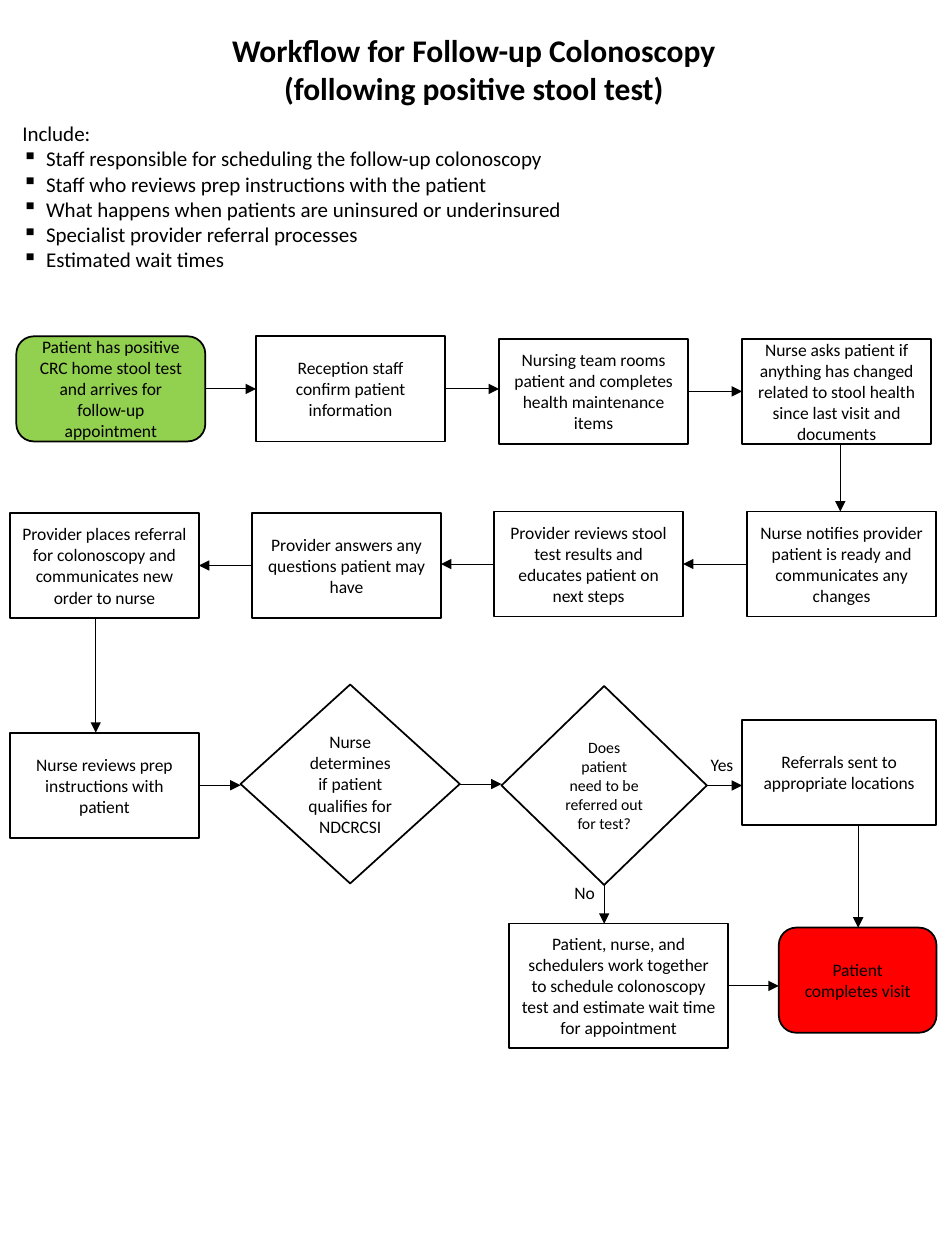
from dataclasses import dataclass
from itertools import pairwise

from lxml.etree import SubElement
from pptx import Presentation
from pptx.dml.color import RGBColor
from pptx.enum.shapes import MSO_CONNECTOR, MSO_SHAPE
from pptx.enum.text import MSO_ANCHOR, PP_ALIGN
from pptx.oxml.ns import qn
from pptx.util import Cm, Pt


@dataclass(frozen=True)
class Theme:
    font: str = "Calibri"
    ink: str = "000000"
    paper: str = "FFFFFF"
    start: str = "92D050"
    finish: str = "FF0000"
    title_size: int = 18
    list_size: int = 12
    step_size: int = 10
    small_size: int = 9
    outline: float = 1
    arrow: float = 0.5


@dataclass(frozen=True)
class Box:
    left: float
    top: float
    width: float = 3.81
    height: float = 2.12

    @property
    def right(self):
        return self.left + self.width

    @property
    def bottom(self):
        return self.top + self.height

    @property
    def middle(self):
        return self.top + self.height / 2

    def inside(self, left, top, width=3.81, height=2.12):
        return Box(self.left + left, self.top + top, width, height)

    def lengths(self):
        return Cm(self.left), Cm(self.top), Cm(self.width), Cm(self.height)


THEME = Theme()
PROCESS = MSO_SHAPE.FLOWCHART_PROCESS
DECISION = MSO_SHAPE.FLOWCHART_DECISION
ROUNDED = MSO_SHAPE.ROUNDED_RECTANGLE
DIAMOND = MSO_SHAPE.DIAMOND


def write(para, text, size=THEME.step_size, bold=False, align=PP_ALIGN.CENTER):
    para.alignment = align
    span = para.add_run()
    span.text = text
    span.font.name = THEME.font
    span.font.size = Pt(size)
    span.font.bold = bold
    span.font.color.rgb = RGBColor.from_string(THEME.ink)


def add_bullet(para, indent):
    properties = para._p.get_or_add_pPr()
    properties.set("marL", str(indent))
    properties.set("indent", str(-indent))
    SubElement(properties, qn("a:buChar"), char="▪")


def add_text(page, box, lines, **style):
    frame = page.shapes.add_textbox(*box.lengths()).text_frame
    frame.word_wrap = True
    for index, line in enumerate(lines):
        para = frame.add_paragraph() if index else frame.paragraphs[0]
        write(para, line, **style)
    return frame


def add_step(page, box, text, kind=PROCESS, fill=None, **style):
    shape = page.shapes.add_shape(kind, *box.lengths())
    shape.shadow.inherit = False
    if fill:
        shape.fill.solid()
        shape.fill.fore_color.rgb = RGBColor.from_string(fill)
    else:
        shape.fill.background()
    shape.line.color.rgb = RGBColor.from_string(THEME.ink)
    shape.line.width = Pt(THEME.outline)
    frame = shape.text_frame
    frame.word_wrap = True
    frame.vertical_anchor = MSO_ANCHOR.MIDDLE
    write(frame.paragraphs[0], text, **style)
    return box


def add_arrow(page, *ends):
    arrow = page.shapes.add_connector(MSO_CONNECTOR.STRAIGHT, *map(Cm, ends))
    arrow.line.color.rgb = RGBColor.from_string(THEME.ink)
    arrow.line.width = Pt(THEME.arrow)
    SubElement(arrow.line._get_or_add_ln(), qn("a:tailEnd"), type="triangle")
    SubElement(arrow._element.spPr, qn("a:effectLst"))


def link_across(page, source, target):
    forward = source.left < target.left
    start = source.right if forward else source.left
    end = target.left if forward else target.right
    add_arrow(page, start, source.middle, end, source.middle)


def link_down(page, source, target, x):
    add_arrow(page, x, source.bottom, x, target.top)


def add_header(page, box):
    add_text(page, box, ["Workflow for Follow-up Colonoscopy", "(following positive stool test)"],
             size=THEME.title_size, bold=True)


def add_include_list(page, box):
    frame = add_text(page, box, [
        "Include:",
        "Staff responsible for scheduling the follow-up colonoscopy",
        "Staff who reviews prep instructions with the patient",
        "What happens when patients are uninsured or underinsured",
        "Specialist provider referral processes",
        "Estimated wait times",
    ], size=THEME.list_size, align=PP_ALIGN.LEFT)
    for para in frame.paragraphs[1:]:
        add_bullet(para, Cm(0.48))


def add_row(page, box, steps):
    placed = [add_step(page, box.inside(*place), text, **style) for place, text, style in steps]
    for source, target in pairwise(placed):
        link_across(page, source, target)
    return placed


def add_intake(page, box):
    return add_row(page, box, [
        ((0, 0), "Patient has positive CRC home stool test and arrives for follow-up appointment",
         dict(kind=ROUNDED, fill=THEME.start)),
        ((4.83, 0), "Reception staff confirm patient information", {}),
        ((9.73, 0.05), "Nursing team rooms patient and completes health maintenance items", {}),
        ((14.63, 0.05), "Nurse asks patient if anything has changed related to stool health "
         "since last visit and documents", {}),
    ])


def add_review(page, box):
    return add_row(page, box, [
        ((14.86, 0), "Nurse notifies provider patient is ready and communicates any changes", {}),
        ((9.76, 0), "Provider reviews stool test results and educates patient on next steps", {}),
        ((4.88, 0.03), "Provider answers any questions patient may have", {}),
        ((0, 0.03), "Provider places referral for colonoscopy and communicates new order to nurse", {}),
    ])


def add_referral(page, box):
    placed = add_row(page, box, [
        ((0, 0.97), "Nurse reviews prep instructions with patient", {}),
        ((4.65, 0, 4.42, 4.01), "Nurse determines if patient qualifies for NDCRCSI",
         dict(kind=DIAMOND, fill=THEME.paper)),
        ((9.91, 0.03, 4.14, 4.01), "Does patient need to be referred out for test?",
         dict(kind=DECISION, size=THEME.small_size)),
        ((14.76, 0.71, 3.91, 2.12), "Referrals sent to appropriate locations", {}),
    ])
    add_text(page, box.inside(13.67, 1.27, 1.37, 0.69), ["Yes"])
    add_text(page, box.inside(10.9, 3.86, 1.37, 0.69), ["No"])
    return placed


def add_closing(page, box):
    return add_row(page, box, [
        ((0, 0, 4.42, 2.51), "Patient, nurse, and schedulers work together to schedule "
         "colonoscopy test and estimate wait time for appointment", {}),
        ((5.44, 0.08, 3.18, 2.12), "Patient completes visit",
         dict(kind=ROUNDED, fill=THEME.finish)),
    ])


def main():
    deck = Presentation()
    deck.slide_width, deck.slide_height = Cm(19.05), Cm(25.4)
    page = deck.slides.add_slide(deck.slide_layouts[6])
    add_header(page, Box(0.03, 0.51, 19.05, 1.8))
    add_include_list(page, Box(0.2, 2.31, 18.67, 3.33))
    intake = add_intake(page, Box(0.33, 6.78, 18.44, 2.17))
    review = add_review(page, Box(0.2, 10.31, 18.67, 2.15))
    referral = add_referral(page, Box(0.2, 13.8, 18.67, 4.04))
    closing = add_closing(page, Box(10.26, 18.62, 8.62, 2.51))
    link_down(page, intake[-1], review[0], 16.94)
    link_down(page, review[-1], referral[0], 1.93)
    link_down(page, referral[2], closing[0], 12.18)
    link_down(page, referral[3], closing[1], 17.3)
    deck.save("out.pptx")


if __name__ == "__main__":
    main()
